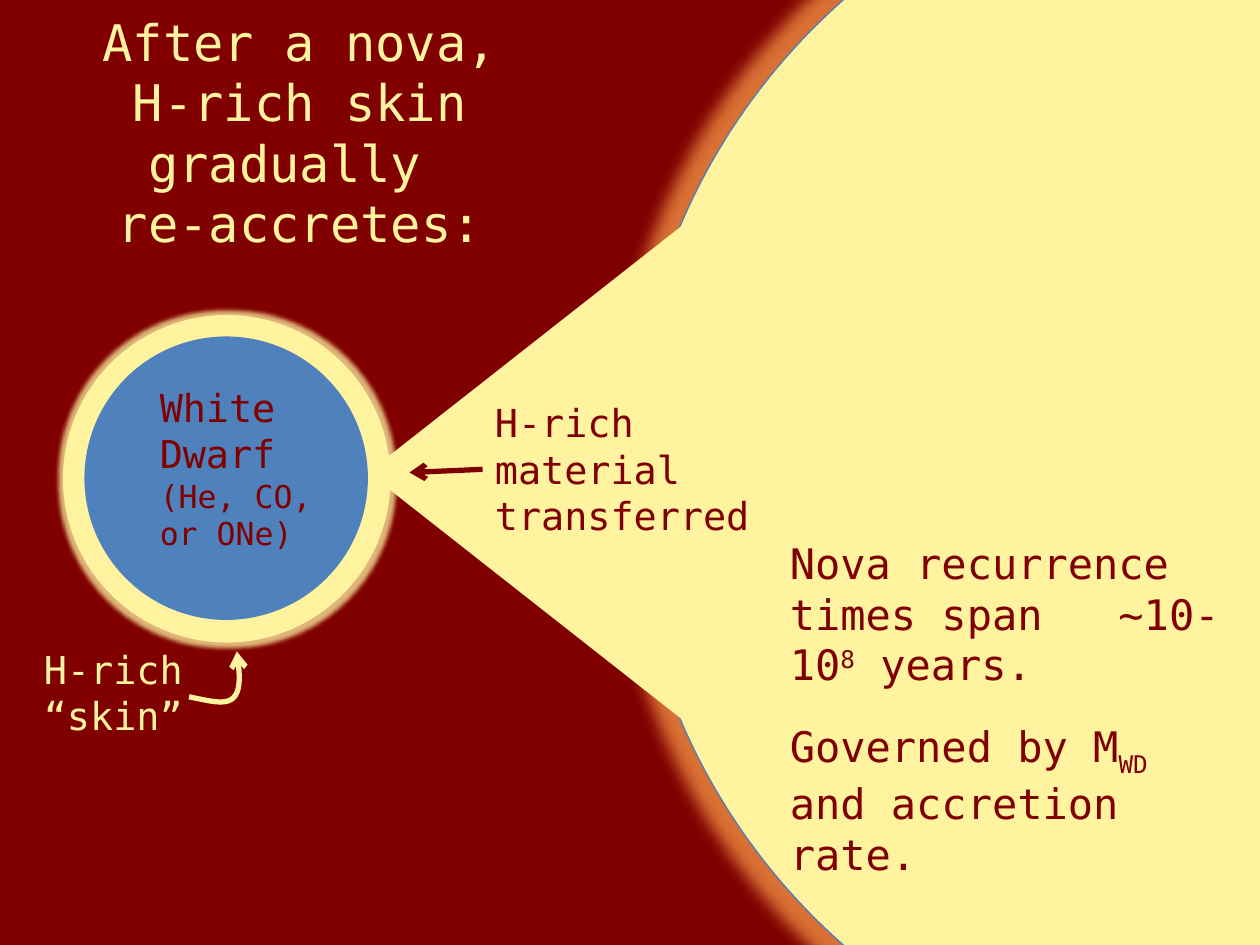
from lxml import etree
from pptx import Presentation
from pptx.dml.color import RGBColor
from pptx.enum.shapes import MSO_CONNECTOR, MSO_SHAPE
from pptx.enum.text import MSO_ANCHOR, MSO_AUTO_SIZE, PP_ALIGN
from pptx.oxml import parse_xml
from pptx.oxml.ns import nsdecls, qn
from pptx.util import Inches, Pt

OVAL, TRIANGLE = MSO_SHAPE.OVAL, MSO_SHAPE.ISOSCELES_TRIANGLE
STRAIGHT = MSO_CONNECTOR.STRAIGHT
MIDDLE, CENTER = MSO_ANCHOR.MIDDLE, PP_ALIGN.CENTER
NO_FIT, GROW = MSO_AUTO_SIZE.NONE, MSO_AUTO_SIZE.SHAPE_TO_FIT_TEXT

FONT = "DejaVu Sans Mono"
COLORS = {
    "maroon": "800000",
    "cream": "FFF3A0",
    "blue": "4F81BD",
    "outline": "4B7EBC",
    "orange": "F79646",
}
RGB = {name: RGBColor.from_string(value) for name, value in COLORS.items()}


def add_label(box, color, paragraphs):
    """Add a text box; each paragraph is (size, space after, [(text, baseline)])."""
    label = slide.shapes.add_textbox(*map(Inches, box))
    frame = label.text_frame
    frame.word_wrap = True
    frame.auto_size = GROW
    for i, (size, space_after, pieces) in enumerate(paragraphs):
        paragraph = frame.paragraphs[0] if i == 0 else frame.add_paragraph()
        paragraph.space_after = Pt(space_after)
        for text, baseline in pieces:
            run = paragraph.add_run()
            run.text = text
            run.font.name = FONT
            run.font.size = Pt(size)
            run.font.color.rgb = RGB[color]
            if baseline:
                run.font._element.set("baseline", str(baseline * 1000))
    return label


def style_arrow(arrow, color):
    arrow.line.color.rgb = RGB[color]
    arrow.line.width = Pt(3)
    etree.SubElement(arrow.line._get_or_add_ln(), qn("a:tailEnd"), type="arrow")


prs = Presentation()
prs.slide_width, prs.slide_height = Inches(10), Inches(7.5)
slide = prs.slides.add_slide(prs.slide_layouts[5])
slide.background.fill.solid()
slide.background.fill.fore_color.rgb = RGB["maroon"]

# Title
title = slide.shapes.title
title.left, title.top, title.width, title.height = map(Inches, (0.67, 0.42, 3.42, 1.25))
heading = title.text_frame
heading.text = "After a nova, H-rich skin gradually  re-accretes:"
heading.word_wrap = True
heading.auto_size = NO_FIT
heading.vertical_anchor = MIDDLE
heading.paragraphs[0].alignment = CENTER
heading_font = heading.paragraphs[0].runs[0].font
heading_font.name, heading_font.size = FONT, Pt(28.8)
heading_font.color.rgb = RGB["cream"]

# White dwarf with its skin, companion star, and the stream between them
bodies = [  # preset, box, fill, outline, rotation, glow (color, points)
    (OVAL, (0.5, 2.5, 2.6, 2.6), "cream", None, 0, ("cream", 5)),
    (OVAL, (0.67, 2.67, 2.25, 2.25), "blue", None, 0, None),
    (OVAL, (5, -1.25, 10, 10), "cream", "outline", 0, ("orange", 18)),
    (TRIANGLE, (1.92, 2, 5.5, 3.5), "cream", None, 270, None),
]
for preset, box, fill, outline, rotation, glow in bodies:
    body = slide.shapes.add_shape(preset, *map(Inches, box))
    body.shadow.inherit = False
    body.rotation = rotation
    body.fill.solid()
    body.fill.fore_color.rgb = RGB[fill]
    if outline:
        body.line.color.rgb = RGB[outline]
        body.line.width = Pt(0.75)
    else:
        body.line.fill.background()
    if glow:
        color, radius = glow
        effects = body._element.spPr.find(qn("a:effectLst"))
        effects.append(parse_xml(
            f'<a:glow {nsdecls("a")} rad="{Pt(radius)}"><a:srgbClr val="{COLORS[color]}">'
            '<a:alpha val="75000"/></a:srgbClr></a:glow>'))

# Transferred material
transfer = add_label((3.83, 3.12, 2.83, 1.21), "maroon",
                     [(22, 0, [("H-rich material transferred", 0)])])
transfer_arrow = slide.shapes.add_connector(
    STRAIGHT, Inches(3.83), Inches(3.75), Inches(3.25), Inches(3.75))
transfer_arrow.begin_connect(transfer, 1)
style_arrow(transfer_arrow, "maroon")
etree.SubElement(transfer_arrow._element.spPr, qn("a:effectLst"))

add_label((1.17, 3, 1.67, 1.45), "maroon",
          [(22, 0, [("White Dwarf", 0)]), (18, 0, [("(He, CO, or ONe)", 0)])])
add_label((0.25, 5.08, 1.92, 0.84), "cream", [(22, 0, [("H-rich “skin”", 0)])])

# Curved arrow to the skin, sampled from two Bézier curves
curves = [
    [(1.5, 5.53), (1.65, 5.56), (1.79, 5.6), (1.85, 5.54)],
    [(1.85, 5.54), (1.92, 5.48), (1.9, 5.32), (1.88, 5.17)],
]
STEPS = 10
points = []
for curve in curves:
    for step in range(1, STEPS + 1):
        t = step / STEPS
        weights = ((1 - t) ** 3, 3 * t * (1 - t) ** 2, 3 * t ** 2 * (1 - t), t ** 3)
        points.append(tuple(
            Inches(sum(w * value for w, value in zip(weights, axis)))
            for axis in zip(*curve)))
start_x, start_y = curves[0][0]
builder = slide.shapes.build_freeform(Inches(start_x), Inches(start_y))
builder.add_line_segments(points, close=False)
skin_arrow = builder.convert_to_shape()
skin_arrow.shadow.inherit = False
skin_arrow.fill.background()
style_arrow(skin_arrow, "cream")

# Recurrence notes
add_label((6.17, 4.22, 3.83, 2.78), "maroon", [
    (24, 18, [("Nova recurrence times span   ~10-10", 0), ("8", 30), (" years.", 0)]),
    (24, 18, [("Governed by M", 0), ("WD", -25), (" and accretion rate.", 0)]),
])

prs.save("out.pptx")
